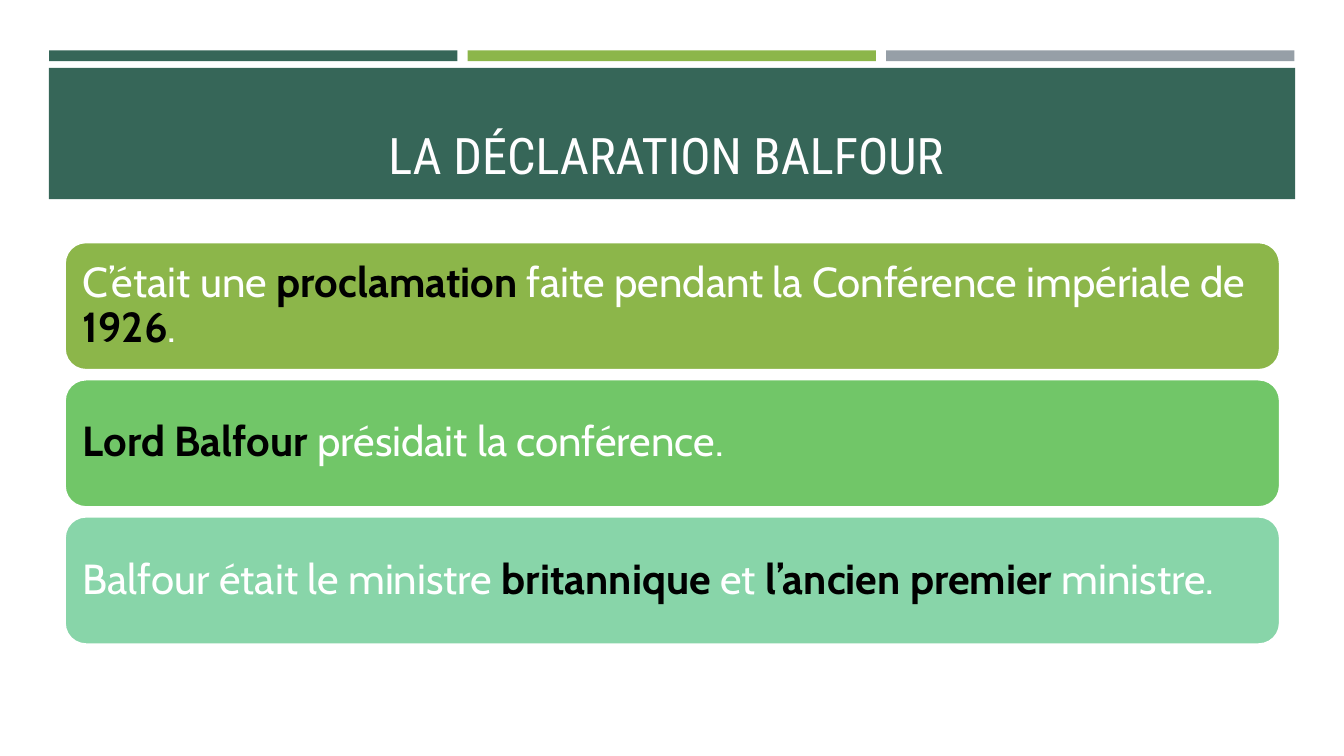
from dataclasses import dataclass

from pptx import Presentation
from pptx.dml.color import RGBColor
from pptx.enum.shapes import MSO_SHAPE as Preset
from pptx.enum.text import MSO_ANCHOR as Anchor, PP_ALIGN as Align
from pptx.util import Cm, Pt


@dataclass(frozen=True)
class Theme:
    dark_green: str = "366658"
    lime: str = "8CB64A"
    grey: str = "969FA7"
    green: str = "71C668"
    mint: str = "88D5A9"
    white: str = "FFFFFF"
    title_white: str = "FFFEFF"
    black: str = "000000"
    title_font: str = "Roboto Condensed"
    body_font: str = "Cabin"
    title_size: float = 36
    body_size: float = 30
    outline: float = 1.75


THEME = Theme()

# Each statement is a fill and its runs; True marks an emphasised run.
STATEMENTS = [
    (THEME.lime, [
        ("C’était une ", False),
        ("proclamation", True),
        (" faite pendant la Conférence impériale de ", False),
        ("1926", True),
        (".", False),
    ]),
    (THEME.green, [
        ("Lord Balfour ", True),
        ("présidait la conférence.", False),
    ]),
    (THEME.mint, [
        ("Balfour était le ministre ", False),
        ("britannique", True),
        (" et ", False),
        ("l’ancien premier ", True),
        ("ministre.", False),
    ]),
]


def add_filled_shape(slide, preset, box, color):
    """Add a flat shape without outline; box is left, top, width, height in cm."""
    shape = slide.shapes.add_shape(preset, *(Cm(length) for length in box))
    shape.shadow.inherit = False
    shape.fill.solid()
    shape.fill.fore_color.rgb = RGBColor.from_string(color)
    shape.line.fill.background()
    return shape


def format_run(run, font_name, size, color, bold=False):
    run.font.name = font_name
    run.font.size = Pt(size)
    run.font.bold = bold
    run.font.color.rgb = RGBColor.from_string(color)


def add_accent_bars(slide, box, gap=0.26):
    left, top, width, height = box
    colors = (THEME.dark_green, THEME.lime, THEME.grey)
    bar_width = (width - gap * (len(colors) - 1)) / len(colors)
    for index, color in enumerate(colors):
        bar_left = left + index * (bar_width + gap)
        add_filled_shape(slide, Preset.RECTANGLE, (bar_left, top, bar_width, height), color)


def add_title_banner(slide, box, title):
    banner = add_filled_shape(slide, Preset.RECTANGLE, box, THEME.dark_green)
    text_frame = banner.text_frame
    text_frame.word_wrap = True
    text_frame.vertical_anchor = Anchor.BOTTOM
    text_frame.margin_bottom = Cm(0.36)
    text_frame.text = title
    paragraph = text_frame.paragraphs[0]
    paragraph.alignment = Align.CENTER
    format_run(paragraph.runs[0], THEME.title_font, THEME.title_size, THEME.title_white)


def add_statement(slide, box, color, runs):
    card = add_filled_shape(slide, Preset.ROUNDED_RECTANGLE, box, color)
    card.line.color.rgb = RGBColor.from_string(THEME.white)
    card.line.width = Pt(THEME.outline)
    text_frame = card.text_frame
    text_frame.word_wrap = True
    text_frame.vertical_anchor = Anchor.MIDDLE
    text_frame.margin_left = text_frame.margin_right = Cm(0.3)
    text_frame.margin_top = text_frame.margin_bottom = Cm(0.3)
    paragraph = text_frame.paragraphs[0]
    paragraph.alignment = Align.LEFT
    paragraph.line_spacing = 0.9
    for text, emphasised in runs:
        run = paragraph.add_run()
        run.text = text
        text_color = THEME.black if emphasised else THEME.white
        format_run(run, THEME.body_font, THEME.body_size, text_color, emphasised)


def add_statement_list(slide, box, statements, gap=0.23):
    left, top, width, height = box
    card_height = (height - gap * (len(statements) - 1)) / len(statements)
    for index, (color, runs) in enumerate(statements):
        card_top = top + index * (card_height + gap)
        add_statement(slide, (left, card_top, width, card_height), color, runs)


def main():
    presentation = Presentation()
    presentation.slide_width = Cm(33.87)
    presentation.slide_height = Cm(19.05)
    slide = presentation.slides.add_slide(presentation.slide_layouts[6])
    add_accent_bars(slide, (1.24, 1.27, 31.38, 0.27))
    # The trailing space sets the title slightly left of centre.
    add_title_banner(slide, (1.23, 1.71, 31.41, 3.31), "LA DÉCLARATION BALFOUR ")
    add_statement_list(slide, (1.63, 6.1, 30.63, 10.14), STATEMENTS)
    presentation.save("out.pptx")


if __name__ == "__main__":
    main()
